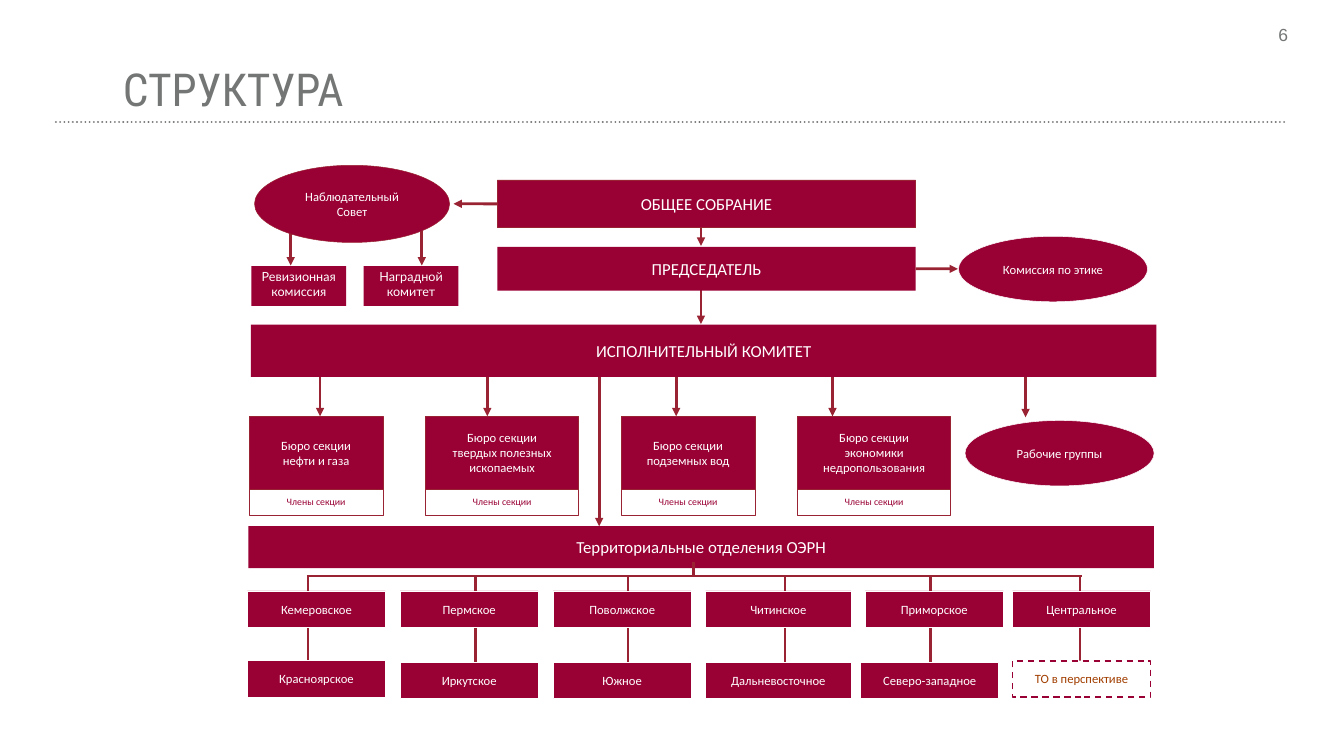
import pptx
import pptx.dml.color
import pptx.enum.dml
import pptx.enum.shapes
import pptx.enum.text
import pptx.oxml.ns
import pptx.util
from lxml import etree

Cm = pptx.util.Cm
Pt = pptx.util.Pt
RGBColor = pptx.dml.color.RGBColor
SHAPE = pptx.enum.shapes.MSO_SHAPE
DASH = pptx.enum.dml.MSO_LINE
ALIGN = pptx.enum.text.PP_ALIGN
ANCHOR = pptx.enum.text.MSO_ANCHOR
qn = pptx.oxml.ns.qn

CRIMSON = RGBColor(0x99, 0x00, 0x33)
WINE = RGBColor(0x9A, 0x23, 0x33)
GRAY = RGBColor(0x74, 0x76, 0x76)
RUST = RGBColor(0xA2, 0x3F, 0x02)
WHITE = RGBColor(0xFF, 0xFF, 0xFF)

BAR_W = 45.64
ELLIPSE_W, ELLIPSE_H = 9.53, 3.3


def write(s, text, size, color, font="Calibri", align=ALIGN.CENTER,
          anchor=ANCHOR.MIDDLE, inset=0.13, wrap=True):
    tf = s.text_frame
    tf.text = text
    tf.word_wrap = wrap
    tf.vertical_anchor = anchor
    tf.margin_left = tf.margin_right = tf.margin_top = tf.margin_bottom = Cm(inset)
    for p in tf.paragraphs:
        p.alignment = align
        for r in p.runs:
            r.font.name = font
            r.font.size = Pt(size)
            r.font.color.rgb = color


def add_box(slide, x, y, w, h, text, size=18, kind=SHAPE.RECTANGLE, fill=CRIMSON,
            line=None, line_width=0.75, color=WHITE, **style):
    s = slide.shapes.add_shape(kind, Cm(x), Cm(y), Cm(w), Cm(h))
    s.shadow.inherit = False
    if fill is None:
        s.fill.background()
    else:
        s.fill.solid()
        s.fill.fore_color.rgb = fill
    if line is None:
        s.line.fill.background()
    else:
        s.line.color.rgb = line
        s.line.width = Pt(line_width)
    write(s, text, size, color, **style)
    return s


def add_line(slide, x1, y1, x2, y2, arrow=False, color=WINE, width=4):
    c = slide.shapes.add_connector(pptx.enum.shapes.MSO_CONNECTOR.STRAIGHT,
                                   Cm(x1), Cm(y1), Cm(x2), Cm(y2))
    c.line.color.rgb = color
    c.line.width = Pt(width)
    properties = c._element.spPr
    if arrow:
        etree.SubElement(properties.find(qn("a:ln")), qn("a:tailEnd"), type="triangle")
    etree.SubElement(properties, qn("a:effectLst"))
    return c


def add_header(slide, left, top, width):
    rule = add_line(slide, left, top + 5.1, left + width, top + 5.1, color=GRAY, width=3)
    rule.line.dash_style = DASH.ROUND_DOT
    rule._element.spPr.find(qn("a:ln")).set("cap", "rnd")
    title = slide.shapes.add_textbox(Cm(left + 3.23), Cm(top + 1.88), Cm(58.88), Cm(2.82))
    write(title, "СТРУКТУРА", 64.8, GRAY, "Roboto Condensed", ALIGN.LEFT, ANCHOR.TOP, 0.15)
    number = slide.shapes.add_textbox(Cm(left + width - 0.63), Cm(top), Cm(0.74), Cm(1.3))
    write(number, "6", 25, GRAY, "Arial", ALIGN.RIGHT, ANCHOR.TOP, 0.15, False)


def add_governance(slide, left, top):
    axis = left + 22.66
    add_line(slide, axis, top + 3.05, axis, top + 4.06, arrow=True)
    add_line(slide, axis, top + 6.17, axis, top + 8, arrow=True)
    for x, arrow_x, name in ((0, 1.98, "Ревизионная комиссия"),
                             (5.66, 8.59, "Наградной комитет")):
        add_box(slide, left + x, top + 5.08, 4.78, 2.01, name,
                font="Lato", anchor=ANCHOR.TOP)
        add_line(slide, left + arrow_x, top + 3.23, left + arrow_x, top + 5.05, arrow=True)
    add_box(slide, left + 0.16, top, 9.83, 3.89, "Наблюдательный\nСовет",
            kind=SHAPE.OVAL, line=WINE)
    assembly = add_box(slide, left + 12.4, top + 0.74, 21.08, 2.41, "ОБЩЕЕ СОБРАНИЕ",
                       24, line=WINE)
    chair = add_box(slide, left + 12.4, top + 4.11, 21.08, 2.21, "ПРЕДСЕДАТЕЛЬ", 24)
    add_box(slide, left + 35.64, top + 3.58, ELLIPSE_W, ELLIPSE_H, "Комиссия по этике",
            kind=SHAPE.OVAL, line=WHITE)
    to_council = add_line(slide, left + 12.4, top + 1.94, left + 10.19, top + 1.94, arrow=True)
    to_council.begin_connect(assembly, 1)
    to_ethics = add_line(slide, left + 33.48, top + 5.22, left + 35.61, top + 5.22, arrow=True)
    to_ethics.begin_connect(chair, 3)


def add_sections(slide, left, top):
    sections = (
        (0, 6.73, 3.56, "Бюро секции\nнефти и газа"),
        (8.89, 7.7, 11.99, "Бюро секции\nтвердых полезных\nископаемых"),
        (18.75, 6.73, 21.51, "Бюро секции\nподземных вод"),
        (27.64, 7.7, 29.39, "Бюро секции\nэкономики\nнедропользования"),
    )
    for x, width, arrow_x, name in sections:
        add_line(slide, left + arrow_x, top + 2.41, left + arrow_x, top + 4.62, arrow=True)
        add_box(slide, left + x, top + 4.62, width, 3.66, name, line=WINE, line_width=1)
        add_box(slide, left + x, top + 8.28, width, 1.32, "Члены секции", 14,
                fill=None, line=WINE, line_width=1, color=CRIMSON)
    add_box(slide, left + 36.07, top + 4.83, ELLIPSE_W, ELLIPSE_H, "Рабочие группы",
            kind=SHAPE.OVAL, line=WHITE)
    add_line(slide, left + 39.12, top + 2.41, left + 39.12, top + 4.67, arrow=True)
    add_line(slide, left + 17.63, top + 2.41, left + 17.63, top + 10.16, arrow=True)
    add_box(slide, left + 0.08, top, BAR_W, 2.64, "ИСПОЛНИТЕЛЬНЫЙ КОМИТЕТ", 24)


def add_territories(slide, left, top):
    bus = top + 2.51
    add_box(slide, left + 0.05, top, BAR_W, 2.11, "Территориальные отделения ОЭРН", 24)
    add_line(slide, left + 22.5, top + 1.78, left + 22.5, bus)
    add_line(slide, left + 3, bus, left + 42.04, bus)
    planned = {"fill": WHITE, "line": CRIMSON, "line_width": 2.25, "color": RUST}
    regular = {"line": WHITE}
    columns = (
        (0, 0, 6.96, 3.05, 6.78, "Кемеровское", "Красноярское"),
        (7.7, 7.7, 6.96, 11.51, 6.86, "Пермское", "Иркутское"),
        (15.41, 15.41, 6.96, 19.18, 6.86, "Поволжское", "Южное"),
        (23.09, 23.09, 7.34, 27.1, 6.86, "Читинское", "Дальневосточное"),
        (31.14, 30.91, 6.96, 34.44, 6.86, "Приморское", "Северо-западное"),
        (38.56, 38.56, 6.96, 41.96, 6.78, "Центральное", "ТО в перспективе"),
    )
    for upper_x, lower_x, width, drop_x, lower_y, upper, lower in columns:
        is_planned = lower == "ТО в перспективе"
        add_line(slide, left + drop_x, bus, left + drop_x, top + lower_y)
        add_box(slide, left + upper_x, top + 3.26, width, 1.83, upper, **regular)
        s = add_box(slide, left + lower_x, top + lower_y, width, 1.83, lower,
                    **(planned if is_planned else regular))
        if is_planned:
            s.line.dash_style = DASH.DASH


def main():
    prs = pptx.Presentation()
    prs.slide_width = Cm(67.74)
    prs.slide_height = Cm(38.1)
    slide = prs.slides.add_slide(prs.slide_layouts[6])
    add_header(slide, 2.82, 1.07, 62.1)
    add_governance(slide, 12.67, 8.33)
    add_sections(slide, 12.57, 16.36)
    add_territories(slide, 12.47, 26.52)
    prs.save("out.pptx")


if __name__ == "__main__":
    main()
